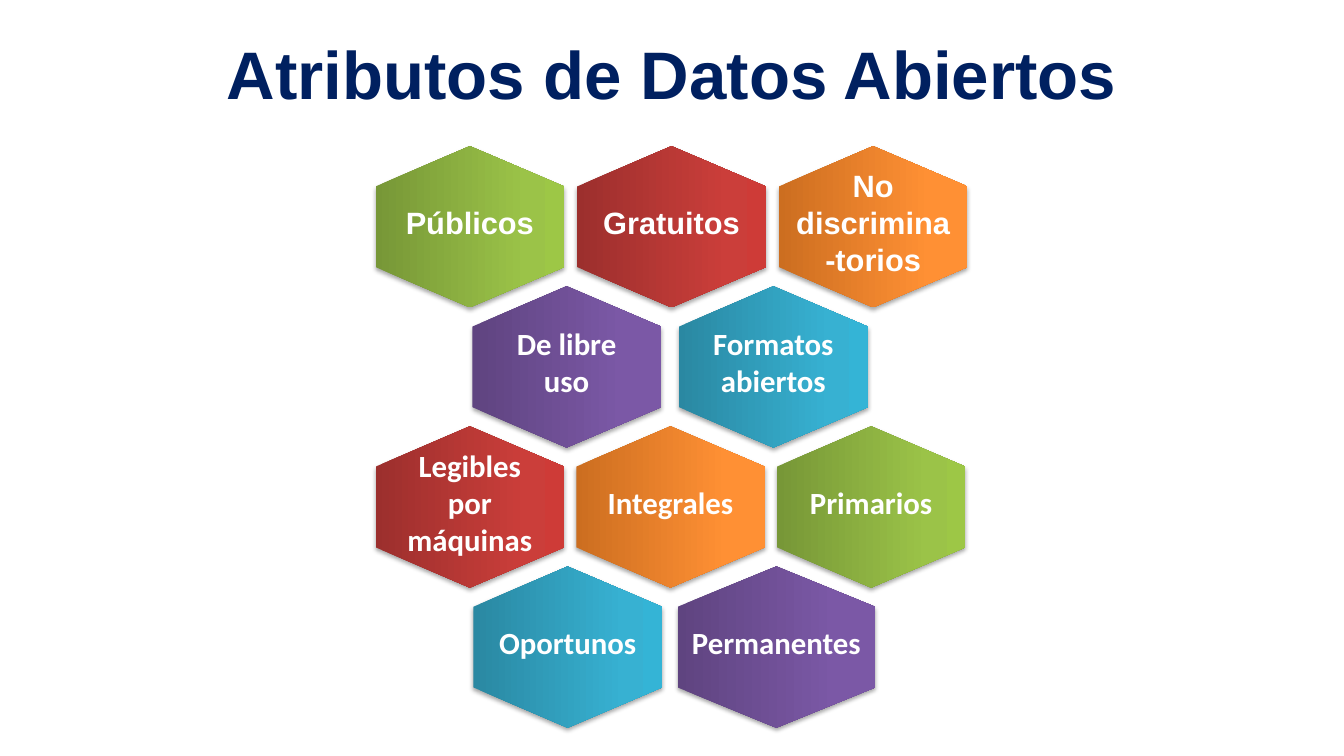
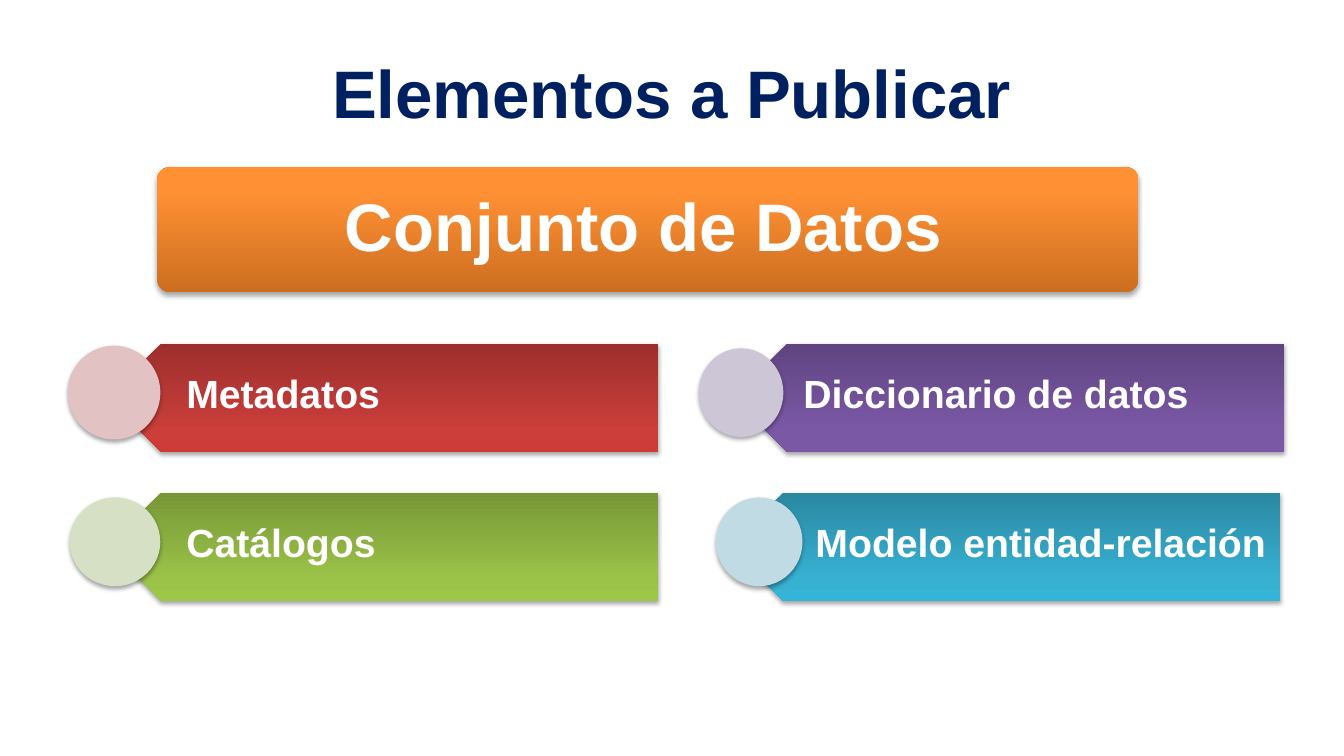
from copy import deepcopy
from dataclasses import dataclass

from lxml.etree import SubElement
from pptx import Presentation
from pptx.dml.color import RGBColor
from pptx.enum.shapes import MSO_SHAPE
from pptx.enum.text import MSO_ANCHOR, PP_ALIGN
from pptx.oxml.ns import qn
from pptx.presentation import Presentation as Deck
from pptx.shapes.autoshape import Shape
from pptx.slide import Slide
from pptx.util import Inches, Pt

SLIDE_WIDTH, SLIDE_HEIGHT = 13.33, 7.5
NAVY, WHITE = "002060", "FFFFFF"
GRADIENT_POSITIONS = (0, 0.8, 1)
RED = ("9C2F2D", "CB3E3A", "CE3B37")
GREEN = ("779737", "9BC348", "9DC746")
PURPLE = ("5F4480", "7B58A6", "7C57A8")
BLUE = ("2A88A2", "37B1D2", "34B4D6")
ORANGE = ("CC6E20", "FF9034", "FF9136")

HEXAGON_HEIGHT = 1.6
FIRST_HEXAGON_ROW, HEXAGON_ROW_PITCH = 2.25, 1.39
BAR_WIDTH, BAR_HEIGHT = 5.47, 1.07
FIRST_BAR_ROW, BAR_ROW_PITCH = 3.41, 1.48
BAR_LABEL_WIDTH = 4.8
OPTICAL_LIFT = 0.05
LABEL_PADDING, LABEL_LINE = 0.1, 0.37


@dataclass(frozen=True)
class Box:
    left: float
    top: float
    width: float
    height: float

    @classmethod
    def centred(cls, x: float, y: float, width: float, height: float) -> "Box":
        return cls(x - width / 2, y - height / 2, width, height)

    def lengths(self) -> tuple[int, int, int, int]:
        return (Inches(self.left), Inches(self.top),
                Inches(self.width), Inches(self.height))


@dataclass(frozen=True)
class Attribute:
    text: str
    colours: tuple[str, str, str]
    font: str = "Calibri"
    lines: int = 1
    width: float = 1.87


@dataclass(frozen=True)
class HexagonRow:
    first_centre: float
    pitch: float
    attributes: tuple[Attribute, ...]


@dataclass(frozen=True)
class Element:
    text: str
    row: int
    colours: tuple[str, str, str]
    bar_left: float
    dot_colour: str
    dot_left: float
    dot_width: float
    dot_height: float
    label_left: float


HEXAGON_ROWS = (
    HexagonRow(4.66, 2.0, (
        Attribute("Públicos", GREEN, "Arial"),
        Attribute("Gratuitos", RED, "Arial"),
        Attribute("No discrimina -torios", ORANGE, "Arial", 3),
    )),
    HexagonRow(5.62, 2.05, (
        Attribute("De libre\nuso", PURPLE, lines=2),
        Attribute("Formatos abiertos", BLUE, lines=2),
    )),
    HexagonRow(4.66, 1.99, (
        Attribute("Legibles\npor máquinas", RED, lines=3),
        Attribute("Integrales", ORANGE),
        Attribute("Primarios", GREEN),
    )),
    HexagonRow(5.63, 2.07, (
        Attribute("Oportunos", BLUE),
        Attribute("Permanentes", PURPLE, width=1.96),
    )),
)

ELEMENTS = (
    Element("Metadatos", 0, RED, 1.06, "E2C2C2", 0.67, 0.92, 0.93, 1.75),
    Element("Catálogos", 1, GREEN, 1.06, "D5E0C4", 0.69, 0.9, 0.88, 1.75),
    Element("Diccionario de datos", 0, PURPLE, 7.27, "CDC6D7", 6.93, 0.84, 0.88, 7.87),
    Element("Modelo entidad-relación", 1, BLUE, 7.23, "C1DBE5", 7.1, 0.86, 0.88, 7.99),
)


def colour(value: str) -> RGBColor:
    return RGBColor.from_string(value)


def write_text(shape: Shape, text: str, size: float, text_colour: str = WHITE,
               font: str = "Arial", alignment: PP_ALIGN = PP_ALIGN.CENTER) -> None:
    frame = shape.text_frame
    frame.text = text
    frame.word_wrap = True
    frame.vertical_anchor = MSO_ANCHOR.MIDDLE
    for paragraph in frame.paragraphs:
        paragraph.alignment = alignment
        for run in paragraph.runs:
            run.font.name = font
            run.font.size = Pt(size)
            run.font.bold = True
            run.font.color.rgb = colour(text_colour)


def add_text(slide: Slide, box: Box, text: str, size: float, **style) -> None:
    write_text(slide.shapes.add_textbox(*box.lengths()), text, size, **style)


def add_shadow(shape: Shape) -> None:
    shape.shadow.inherit = False
    effects = shape._element.spPr.find(qn("a:effectLst"))
    shadow = SubElement(effects, qn("a:outerShdw"), blurRad="40000", dist="23000",
                        dir="5400000", rotWithShape="0")
    shade = SubElement(shadow, qn("a:srgbClr"), val="000000")
    SubElement(shade, qn("a:alpha"), val="35000")


def add_figure(slide: Slide, kind: MSO_SHAPE, box: Box, rotation: float = 0) -> Shape:
    shape = slide.shapes.add_shape(kind, *box.lengths())
    shape.rotation = rotation
    shape.line.fill.background()
    add_shadow(shape)
    return shape


def fill_gradient(shape: Shape, colours: tuple[str, str, str]) -> None:
    """Run the colours from the bottom to the top of the unrotated shape."""
    shape.fill.gradient()
    shape.fill.gradient_angle = 90
    stop_list = shape._element.spPr.find(".//" + qn("a:gsLst"))
    stop_list.append(deepcopy(stop_list[0]))
    for stop, position, value in zip(shape.fill.gradient_stops,
                                     GRADIENT_POSITIONS, colours):
        stop.position = position
        stop.color.rgb = colour(value)


def add_titled_slide(presentation: Deck, title: str, box: Box) -> Slide:
    slide = presentation.slides.add_slide(presentation.slide_layouts[6])
    add_text(slide, box, title, 48, text_colour=NAVY)
    return slide


def add_attribute(slide: Slide, attribute: Attribute, x: float, y: float) -> None:
    # A quarter turn swaps the sides of the hexagon's frame.
    frame = Box.centred(x, y, HEXAGON_HEIGHT, attribute.width)
    hexagon = add_figure(slide, MSO_SHAPE.HEXAGON, frame, 90)
    hexagon.adjustments[0] = 0.25
    fill_gradient(hexagon, attribute.colours)
    label_height = LABEL_PADDING + LABEL_LINE * attribute.lines
    label = Box.centred(x, y - OPTICAL_LIFT, attribute.width, label_height)
    add_text(slide, label, attribute.text, 22, font=attribute.font)


def add_element(slide: Slide, element: Element) -> None:
    top = FIRST_BAR_ROW + BAR_ROW_PITCH * element.row
    middle = top + BAR_HEIGHT / 2 - OPTICAL_LIFT
    bar = add_figure(slide, MSO_SHAPE.PENTAGON,
                     Box(element.bar_left, top, BAR_WIDTH, BAR_HEIGHT), 180)
    fill_gradient(bar, element.colours)
    dot = add_figure(slide, MSO_SHAPE.OVAL,
                     Box(element.dot_left, middle - element.dot_height / 2,
                         element.dot_width, element.dot_height))
    dot.fill.solid()
    dot.fill.fore_color.rgb = colour(element.dot_colour)
    label = Box(element.label_left, middle - 0.28, BAR_LABEL_WIDTH, 0.57)
    add_text(slide, label, element.text, 28, alignment=PP_ALIGN.LEFT)


def add_attributes_slide(presentation: Deck) -> None:
    title_box = Box.centred(SLIDE_WIDTH / 2, 0.72, 11.5, 1.45)
    slide = add_titled_slide(presentation, "Atributos de Datos Abiertos", title_box)
    for row_index, row in enumerate(HEXAGON_ROWS):
        y = FIRST_HEXAGON_ROW + HEXAGON_ROW_PITCH * row_index
        for column, attribute in enumerate(row.attributes):
            add_attribute(slide, attribute, row.first_centre + row.pitch * column, y)


def add_elements_slide(presentation: Deck) -> None:
    title_box = Box(0, 0, SLIDE_WIDTH, 1.81)
    slide = add_titled_slide(presentation, "Elementos a Publicar", title_box)
    for element in ELEMENTS:
        add_element(slide, element)
    banner = add_figure(slide, MSO_SHAPE.ROUNDED_RECTANGLE, Box(1.56, 1.66, 9.73, 1.24))
    banner.adjustments[0] = 0.1
    fill_gradient(banner, ORANGE)
    write_text(banner, "Conjunto de Datos", 48)
    frame = banner.text_frame
    frame.margin_left, frame.margin_right = Inches(0.14), Inches(0.22)
    frame.paragraphs[0].line_spacing = 0.9


def main() -> None:
    presentation = Presentation()
    presentation.slide_width = Inches(SLIDE_WIDTH)
    presentation.slide_height = Inches(SLIDE_HEIGHT)
    add_attributes_slide(presentation)
    add_elements_slide(presentation)
    presentation.save("out.pptx")


if __name__ == "__main__":
    main()
